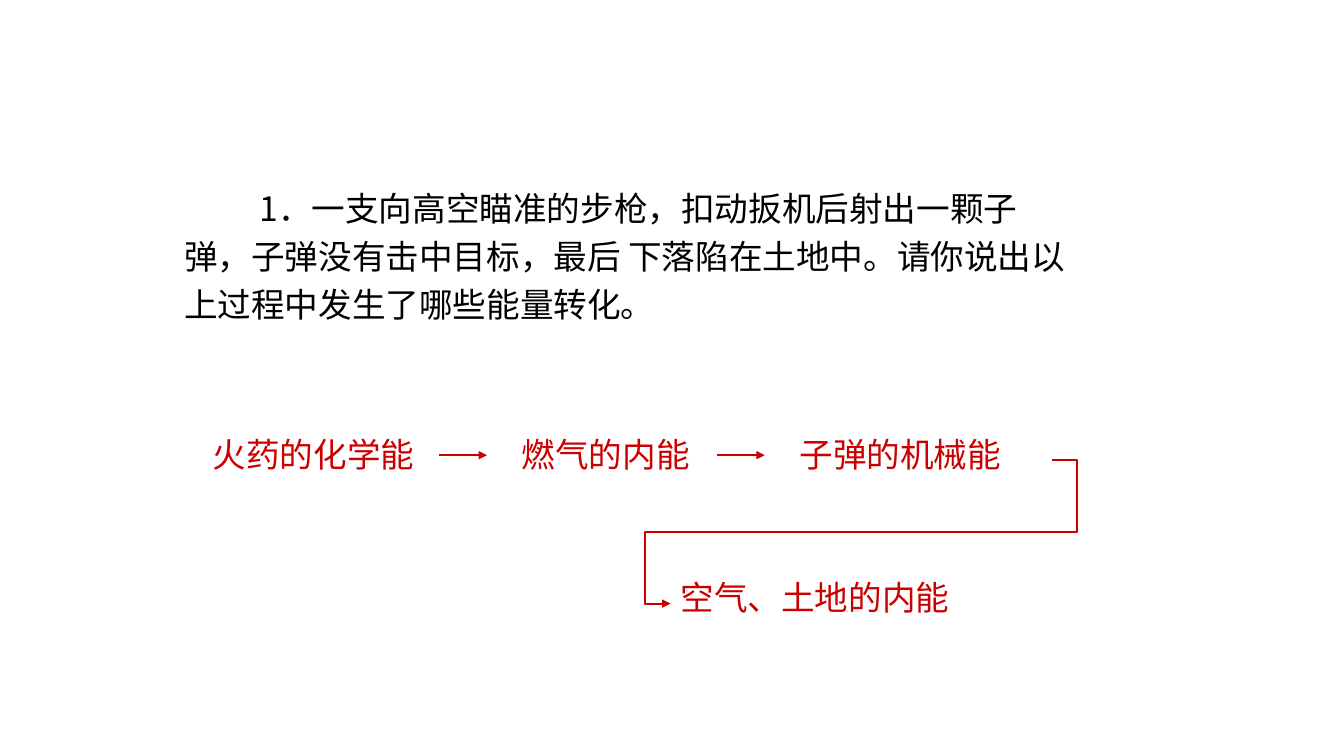
from lxml import etree
from pptx import Presentation
from pptx.dml.color import RGBColor
from pptx.enum.shapes import MSO_CONNECTOR
from pptx.enum.text import MSO_AUTO_SIZE
from pptx.oxml.ns import qn
from pptx.util import Cm, Pt

STRAIGHT, ELBOW = MSO_CONNECTOR.STRAIGHT, MSO_CONNECTOR.ELBOW
FIT_SHAPE = MSO_AUTO_SIZE.SHAPE_TO_FIT_TEXT
FONT = "Noto Sans CJK SC"
COLORS = {"question": "000000", "answer": "CC0000"}
LABEL_HEIGHT = 1.27

QUESTION = (
    "1．一支向高空瞄准的步枪，扣动扳机后射出一颗子弹，子弹没有击中目标，"
    "最后 下落陷在土地中。请你说出以上过程中发生了哪些能量转化。"
)
# Energy form, offset from the left of the flow, width
FIRST_ROW = [("火药的化学能", 0, 6.6), ("燃气的内能", 7.79, 6), ("子弹的机械能", 14.79, 6.61)]
LAST_FORM = ("空气、土地的内能", 11.79, 10.21)


def add_text(page, left, top, width, height, text, color):
    box = page.shapes.add_textbox(Cm(left), Cm(top), Cm(width), Cm(height))
    box.text_frame.word_wrap = True
    box.text_frame.auto_size = FIT_SHAPE
    para = box.text_frame.paragraphs[0]
    span = para.add_run()
    span.text = text
    span.font.size = Pt(24)
    span.font.name = FONT
    span.font.color.rgb = RGBColor.from_string(COLORS[color])
    east_asian = etree.SubElement(span.font._element, qn("a:ea"))
    east_asian.set("typeface", FONT)
    return para


def add_arrow(page, kind, start, end):
    arrow = page.shapes.add_connector(kind, *(Cm(value) for value in (*start, *end)))
    arrow.line.color.rgb = RGBColor.from_string(COLORS["answer"])
    arrow.line.width = Pt(1.5)
    head = etree.SubElement(arrow.line._get_or_add_ln(), qn("a:tailEnd"))
    head.set("type", "triangle")
    etree.SubElement(arrow._element.spPr, qn("a:effectLst"))
    return arrow


def wrap_around(arrow):
    """Route an elbow out to the right, back between the rows, and in from the left."""
    geometry = arrow._element.spPr.find(qn("a:prstGeom"))
    geometry.set("prst", "bentConnector5")
    adjustments = geometry.find(qn("a:avLst"))
    for number, value in enumerate((-6600, 49900, 106600), 1):
        guide = etree.SubElement(adjustments, qn("a:gd"))
        guide.set("name", f"adj{number}")
        guide.set("fmla", f"val {value}")


def add_question(page, left, top, width, height):
    para = add_text(page, left, top, width, height, QUESTION, "question")
    para.line_spacing = 1.2
    properties = para._element.get_or_add_pPr()
    properties.set("marL", "0")
    properties.set("indent", str(Cm(1.9)))
    properties.set("hangingPunct", "0")


def add_energy_flow(page, left, top, row_gap):
    for index, (text, offset, width) in enumerate(FIRST_ROW):
        add_text(page, left + offset, top, width, LABEL_HEIGHT, text, "answer")
        if index:
            start, middle = left + offset - 1.83, top + 0.67
            add_arrow(page, STRAIGHT, (start, middle), (start + 1.2, middle))
    row_end = left + offset + width

    text, offset, width = LAST_FORM
    last_left, last_top = left + offset, top + row_gap
    add_text(page, last_left, last_top, width, LABEL_HEIGHT, text, "answer")
    wrap_around(add_arrow(page, ELBOW, (row_end, top + 0.8), (last_left, last_top + 0.8)))


def main():
    deck = Presentation()
    deck.slide_width, deck.slide_height = Cm(33.87), Cm(19.05)
    page = deck.slides.add_slide(deck.slide_layouts[6])
    add_question(page, 4.39, 4.4, 23.11, 3.84)
    add_energy_flow(page, 5.11, 10.8, 3.61)
    deck.save("out.pptx")


if __name__ == "__main__":
    main()
